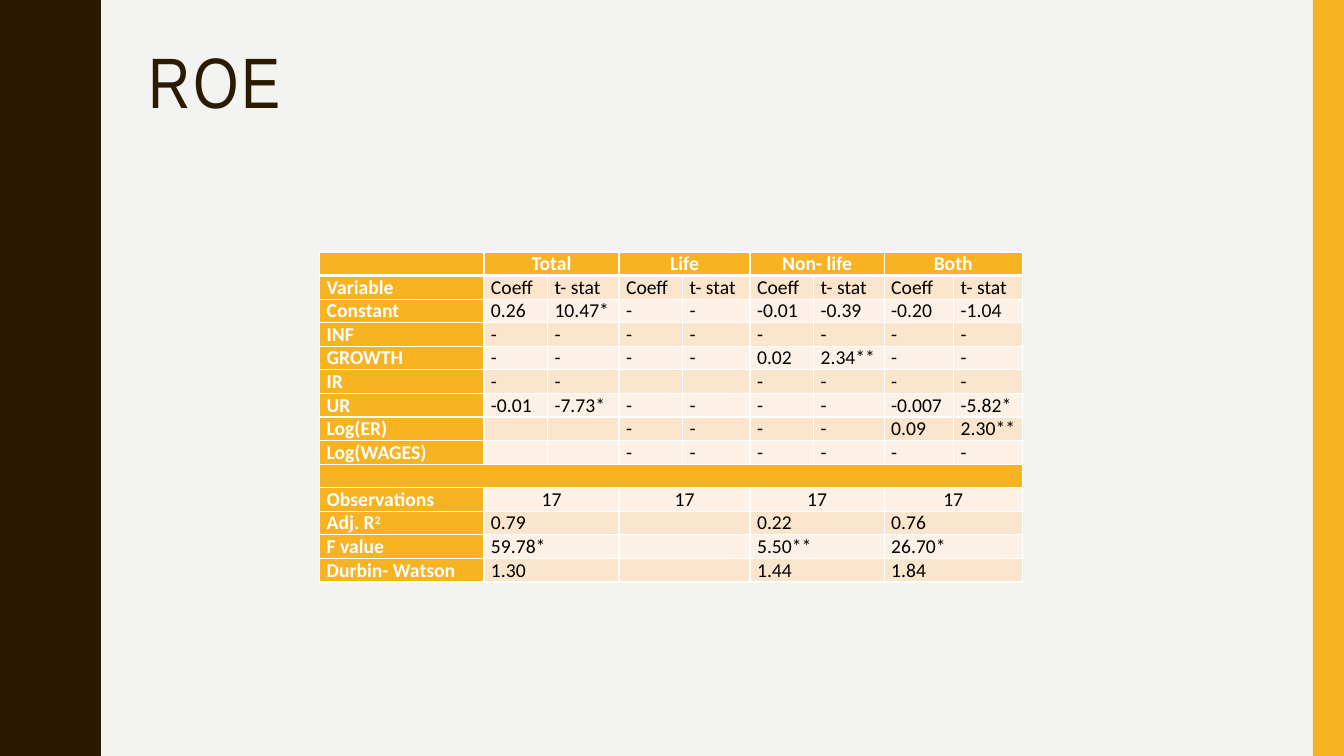
from lxml.etree import SubElement
from pptx import Presentation
from pptx.dml.color import RGBColor
from pptx.enum.shapes import MSO_SHAPE as Shape
from pptx.enum.text import MSO_ANCHOR as Anchor, PP_ALIGN as Align
from pptx.oxml.ns import qn
from pptx.util import Inches, Pt

BROWN, GOLD, PAPER = "2A1A00", "F8B323", "F3F3F2"
PEACH, CREAM, WHITE, BLACK = "FCE5CD", "FEF2E8", "FFFFFF", "000000"


def paint(fill, color):
    fill.solid()
    fill.fore_color.rgb = RGBColor.from_string(color)


def rule_cell(cell, top, bottom):
    """Draw white borders round a cell; top and bottom widths are in points."""
    props = cell._tc.get_or_add_tcPr()
    for side, width in (("L", 1), ("R", 1), ("T", top), ("B", bottom)):
        line = SubElement(props, qn(f"a:ln{side}"), w=str(Pt(width)))
        SubElement(SubElement(line, qn("a:solidFill")), qn("a:srgbClr"), val=WHITE)


deck = Presentation()
deck.slide_width, deck.slide_height = Inches(13.33), Inches(7.5)
slide = deck.slides.add_slide(deck.slide_layouts[6])
paint(slide.background.fill, PAPER)

# Wavy left edge: five equal waves, each a rising half and its mirror
period = 1.5
rise = [(0.78, 0), (0.78, 0.07), (0.79, 0.14), (0.8, 0.2), (0.81, 0.25),
        (0.83, 0.29), (0.85, 0.33), (0.87, 0.38), (0.89, 0.42), (0.91, 0.46),
        (0.93, 0.5), (0.95, 0.55), (0.96, 0.61), (0.97, 0.68), (0.97, 0.75)]
wave = rise + [(x, period - y) for x, y in reversed(rise[:-1])]
edge = [(x, y + period * n) for n in range(5) for x, y in wave]
outline = slide.shapes.build_freeform(0, 0, scale=Inches(1))
outline.add_line_segments(edge + [(0, 7.5)], close=True)
wavy_edge = outline.convert_to_shape()
gold_bar = slide.shapes.add_shape(
    Shape.RECTANGLE, Inches(13.02), 0, Inches(0.31), deck.slide_height)
for band, color in ((wavy_edge, BROWN), (gold_bar, GOLD)):
    paint(band.fill, color)
    band.line.fill.background()
    band.shadow.inherit = False

title = slide.shapes.add_textbox(
    Inches(1.37), Inches(0.42), Inches(11.13), Inches(1.63)).text_frame
title.word_wrap = True
title.vertical_anchor = Anchor.TOP
heading = title.paragraphs[0]
heading.text = "ROE"
heading.line_spacing = 0.9
heading_run = heading.runs[0]
heading_run.font.size = Pt(51)
heading_run.font.name = "Arial Narrow"
heading_run.font.color.rgb = RGBColor.from_string(BROWN)
heading_run._r.get_or_add_rPr().set("spc", "200")

# Rows with four values hold one value for each pair of columns
results = [
    ("", "Total", "Life", "Non- life", "Both"),
    ("Variable", *["Coeff", "t- stat"] * 4),
    ("Constant", "0.26", "10.47*", "-", "-", "-0.01", "-0.39", "-0.20", "-1.04"),
    ("INF", *"--------"),
    ("GROWTH", "-", "-", "-", "-", "0.02", "2.34**", "-", "-"),
    ("IR", "-", "-", "", "", "-", "-", "-", "-"),
    ("UR", "-0.01", "-7.73*", "-", "-", "-", "-", "-0.007", "-5.82*"),
    ("Log(ER)", "", "", "-", "-", "-", "-", "0.09", "2.30**"),
    ("Log(WAGES)", "", "", *"------"),
    ("",),
    ("Observations", "17", "17", "17", "17"),
    ("Adj. R", "0.79", "", "0.22", "0.76"),
    ("F value", "59.78*", "", "5.50**", "26.70*"),
    ("Durbin- Watson", "1.30", "", "1.44", "1.84"),
]
widths = [1.63, 0.63, 0.71, 0.63, 0.67, 0.63, 0.7, 0.69, 0.68]
table = slide.shapes.add_table(
    len(results), len(widths), Inches(3.17), Inches(2.5),
    Inches(sum(widths)), Inches(3.27)).table
for column, width in zip(table.columns, widths):
    column.width = Inches(width)

for row, values in enumerate(results):
    shade = PEACH if row % 2 else CREAM
    for col in range(len(widths)):
        cell = table.cell(row, col)
        rule_cell(cell, top=3 if row == 1 else 1, bottom=3 if row == 0 else 1)
        is_gold = row == 0 or col == 0 or len(values) == 1
        paint(cell.fill, GOLD if is_gold else shade)
        cell.margin_left = cell.margin_right = Inches(0.07)
        cell.margin_top = cell.margin_bottom = 0

    if len(values) == 1:
        table.cell(row, 0).merge(table.cell(row, len(widths) - 1))
    paired = len(values) == 5
    for place, value in enumerate(values):
        col = 2 * place - 1 if paired and place else place
        cell = table.cell(row, col)
        if paired and place:
            cell.merge(table.cell(row, col + 1))
        entry = cell.text_frame.paragraphs[0]
        centred = paired and place and values[1] in ("Total", "17")
        entry.alignment = Align.CENTER if centred else Align.JUSTIFY
        if value:
            entry.text = value
        if value == "Adj. R":
            square = entry.add_run()
            square.text = "2"
            square._r.get_or_add_rPr().set("baseline", "30000")
        is_label = row == 0 or col == 0
        for run in entry.runs:
            run.font.size = Pt(14)
            run.font.name = "Calibri"
            run.font.bold = is_label
            run.font.color.rgb = RGBColor.from_string(WHITE if is_label else BLACK)

# Empty cells take the text size too, so that their rows stay low
for cell in table.iter_cells():
    if not cell.text_frame.text:
        SubElement(cell.text_frame.paragraphs[0]._p, qn("a:endParaRPr"), sz="1400")

deck.save("out.pptx")
